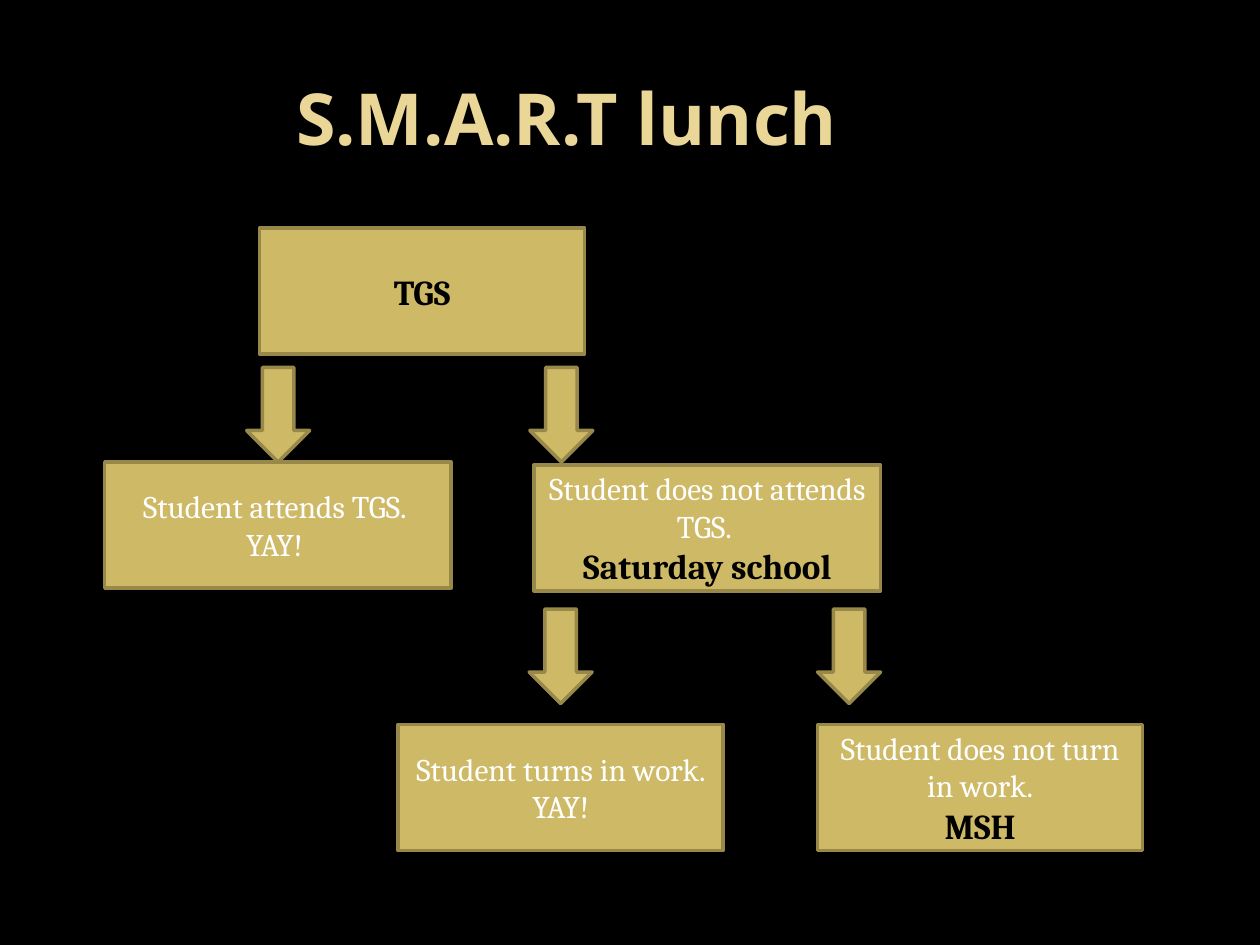
from pptx import Presentation
from pptx.dml.color import RGBColor
from pptx.enum import shapes, text
from pptx.util import Pt

HUES = {
    "back": "000000", "title": "EAD696", "gold": "CEB966",
    "edge": "98894B", "plain": "FFFFFF", "key": "000000",
}
BOX_H = 72
WIDE, SLIM = 198, 185.8
ARROW_W, ARROW_H = 36, 54


def hue(name):
    return RGBColor.from_string(HUES[name])


def style(font, face, size, tint, bold=False):
    font.name, font.size, font.bold = face, Pt(size), bold
    font.color.rgb = hue(tint)


def add_title(slide, words):
    title = slide.shapes.title
    title.left, title.top, title.width, title.height = Pt(0), Pt(21.6), Pt(648), Pt(90)
    frame = title.text_frame
    frame.text = words
    frame.vertical_anchor = text.MSO_ANCHOR.MIDDLE
    para = frame.paragraphs[0]
    para.alignment = text.PP_ALIGN.CENTER
    style(para.font, "Open Sans", 41, "title", True)


def add_gold(slide, kind, left, top, width, height):
    """Add a gold preset shape with a darker edge."""
    shape = slide.shapes.add_shape(kind, Pt(left), Pt(top), Pt(width), Pt(height))
    shape.shadow.inherit = False
    shape.fill.solid()
    shape.fill.fore_color.rgb = hue("gold")
    shape.line.color.rgb = hue("edge")
    shape.line.width = Pt(2)
    return shape


def add_box(slide, left, top, width, plain=(), key=None):
    """Add a step: plain lines first, then an optional bold key line."""
    box = add_gold(slide, shapes.MSO_SHAPE.RECTANGLE, left, top, width, BOX_H)
    frame = box.text_frame
    frame.word_wrap = True
    frame.vertical_anchor = text.MSO_ANCHOR.MIDDLE
    lines = [(words, 18, "plain", False) for words in plain]
    if key:
        lines.append((key, 20, "key", True))
    for i, (words, size, tint, bold) in enumerate(lines):
        para = frame.add_paragraph() if i else frame.paragraphs[0]
        para.text = words
        para.alignment = text.PP_ALIGN.CENTER
        style(para.font, "Cambria", size, tint, bold)


def add_arrow(slide, left, top):
    add_gold(slide, shapes.MSO_SHAPE.DOWN_ARROW, left, top, ARROW_W, ARROW_H)


def main():
    deck = Presentation()
    deck.slide_width, deck.slide_height = Pt(720), Pt(540)
    slide = deck.slides.add_slide(deck.slide_layouts[5])
    slide.background.fill.solid()
    slide.background.fill.fore_color.rgb = hue("back")

    add_title(slide, "S.M.A.R.T lunch")
    for left, top in ((141, 210), (302.8, 210), (302.4, 348), (467.2, 348)):
        add_arrow(slide, left, top)

    add_box(slide, 148.3, 130.3, SLIM, key="TGS")
    add_box(slide, 59.8, 264, WIDE, ["Student attends TGS. ", "YAY! "])
    add_box(slide, 305.2, 265.7, WIDE, ["Student does not attends TGS. "], "Saturday school")
    add_box(slide, 227.5, 414, SLIM, ["Student turns in work. YAY!"])
    add_box(slide, 467.2, 414, SLIM, ["Student does not turn in work."], "MSH")

    deck.save("out.pptx")


if __name__ == "__main__":
    main()
